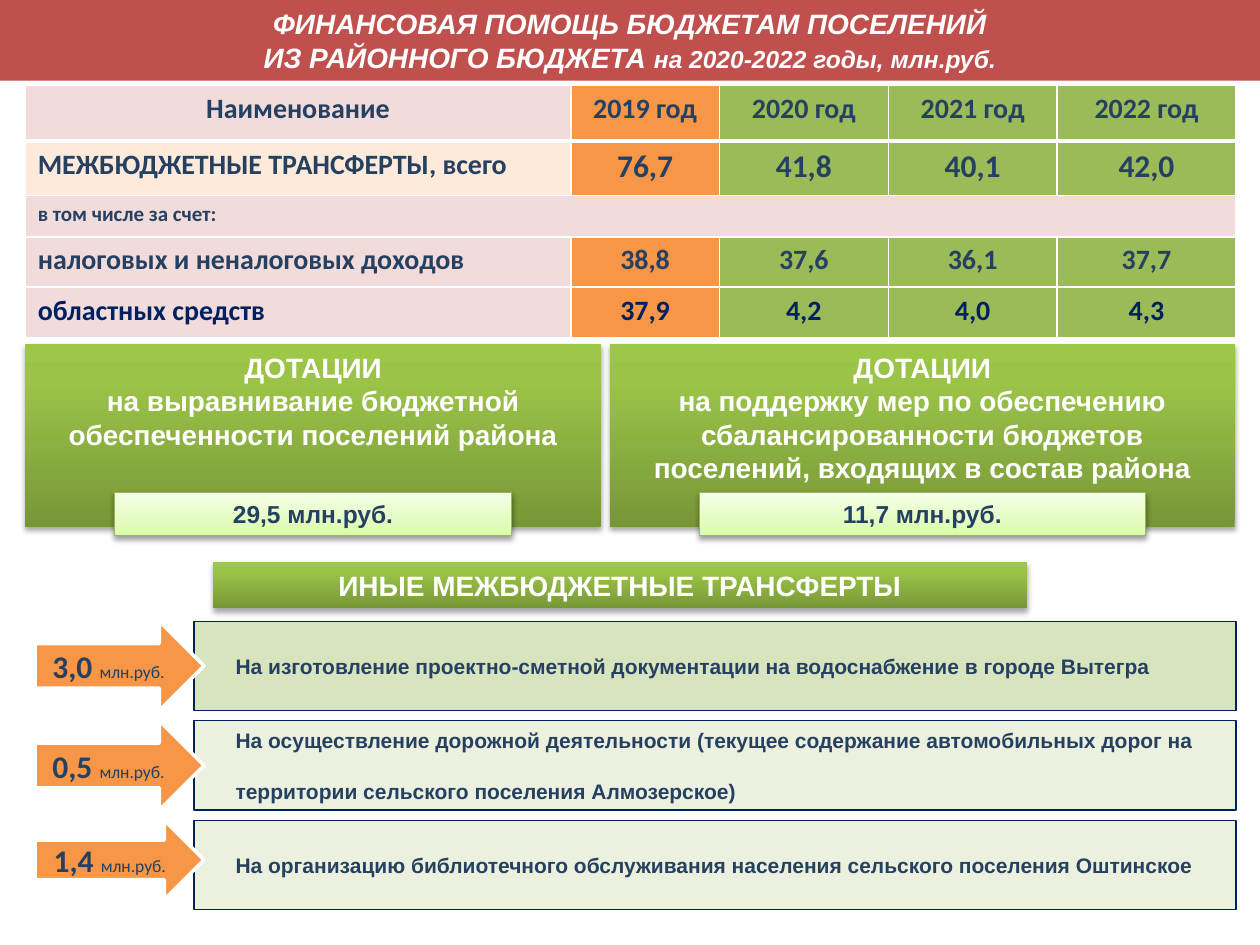
from dataclasses import dataclass

from lxml.etree import SubElement
from pptx import Presentation
from pptx.dml.color import RGBColor
from pptx.enum.shapes import MSO_SHAPE
from pptx.enum.text import MSO_ANCHOR, MSO_AUTO_SIZE, PP_ALIGN
from pptx.oxml.ns import qn
from pptx.util import Inches, Pt


@dataclass(frozen=True)
class Theme:
    heading_font: str = "Arial"
    table_font: str = "Calibri"
    white: str = "FFFFFF"
    navy: str = "254061"
    deep_navy: str = "002060"
    red: str = "C0504D"
    pink: str = "F2DCDB"
    peach: str = "FDEADA"
    orange: str = "F79646"
    green: str = "9BBB59"
    green_line: str = "98B955"
    sage: str = "D7E4BD"
    pale_sage: str = "EBF1DE"
    dark_gradient: tuple = ((0, "779737"), (80, "9BC348"), (100, "9DC746"))
    light_gradient: tuple = ((0, "DAFDA7"), (35, "E4FCC2"), (100, "F5FFE7"))
    large: int = 18
    heading: int = 16
    value: int = 14
    small: int = 12
    unit: int = 10


THEME = Theme()
HEADING = {"name": THEME.heading_font, "size": THEME.heading, "color": THEME.white, "bold": True}
TITLE = HEADING | {"italic": True}
VALUE = HEADING | {"size": THEME.value, "color": THEME.navy}
PURPOSE = VALUE | {"size": THEME.small}
CELL = {"name": THEME.table_font, "size": THEME.heading, "color": THEME.navy, "bold": True}
AMOUNT = CELL | {"size": THEME.large}
UNIT = CELL | {"size": THEME.unit, "bold": False}

COLUMN_WIDTHS = (4.33, 1.18, 1.34, 1.34, 1.42)
COLUMN_FILLS = (THEME.pink, THEME.orange) + (THEME.green,) * 3
# Row height, label, values, first-cell fill, label format, value format
TABLE_ROWS = (
    (0.44, "Наименование", ("2019 год", "2020 год", "2021 год", "2022 год"), THEME.pink, CELL, CELL),
    (0.43, "МЕЖБЮДЖЕТНЫЕ ТРАНСФЕРТЫ, всего", ("76,7", "41,8", "40,1", "42,0"),
     THEME.peach, CELL, AMOUNT),
    (0.33, "в том числе за счет:", (), THEME.pink, CELL | {"size": THEME.small}, CELL),
    (0.4, "налоговых и неналоговых доходов", ("38,8", "37,6", "36,1", "37,7"), THEME.pink, CELL, CELL),
    (0.4, "областных средств", ("37,9", "4,2", "4,0", "4,3"), THEME.pink,
     CELL | {"color": THEME.deep_navy}, CELL | {"color": THEME.deep_navy}),
)
# Left, width, text, then left, width and text of the amount
GRANTS = (
    (0.2, 4.57, "на выравнивание бюджетной обеспеченности поселений района",
     0.91, 3.15, "29,5 млн.руб."),
    (4.84, 4.96, "на поддержку мер по обеспечению сбалансированности бюджетов "
     "поселений, входящих в состав района", 5.55, 3.54, "11,7 млн.руб."),
)
# Amount, arrow height, fill, lines of purpose
TRANSFERS = (
    ("3,0", 0.71, THEME.sage,
     ("На изготовление проектно-сметной документации на водоснабжение в городе Вытегра",)),
    ("0,5", 0.71, THEME.pale_sage,
     ("На осуществление дорожной деятельности (текущее содержание автомобильных дорог на",
      "территории сельского поселения Алмозерское)")),
    ("1,4", 0.63, THEME.pale_sage,
     ("На организацию библиотечного обслуживания населения сельского поселения Оштинское",)),
)


def write_text(frame, paragraphs, align=PP_ALIGN.CENTER, gap=0):
    """Fill a frame; each paragraph is a list of (text, format) spans."""
    for index, spans in enumerate(paragraphs):
        para = frame.add_paragraph() if index else frame.paragraphs[0]
        para.alignment = align
        para.space_before = Pt(gap if index else 0)
        for text, look in spans:
            span = para.add_run()
            span.text = text
            for key, value in look.items():
                if key == "color":
                    span.font.color.rgb = RGBColor.from_string(value)
                else:
                    setattr(span.font, key, Pt(value) if key == "size" else value)


def paint(fill, color):
    fill.solid()
    fill.fore_color.rgb = RGBColor.from_string(color)


def add_color(parent, color):
    return SubElement(parent, qn("a:srgbClr"), val=color)


def paint_gradient(box, stops):
    """Run the stops from the bottom edge to the top edge."""
    box.fill.gradient()
    box.fill.gradient_angle = 90
    stop_list = box.element.spPr.find(".//" + qn("a:gsLst"))
    for old_stop in list(stop_list):
        stop_list.remove(old_stop)
    for position, color in stops:
        add_color(SubElement(stop_list, qn("a:gs"), pos=str(position * 1000)), color)


def cast_shadow(box, alpha, distance):
    effects = box.element.spPr.find(qn("a:effectLst"))
    shadow = SubElement(effects, qn("a:outerShdw"), blurRad=str(Pt(3.1)), dist=str(Pt(distance)),
                        dir="5400000", rotWithShape="0")
    SubElement(add_color(shadow, "000000"), qn("a:alpha"), val=str(alpha * 1000))


def add_box(slide, place, fill, line=None, weight=0.75, shape=MSO_SHAPE.RECTANGLE,
            anchor=MSO_ANCHOR.MIDDLE):
    """Add a shape whose fill is one colour or a tuple of gradient stops."""
    box = slide.shapes.add_shape(shape, *map(Inches, place))
    box.shadow.inherit = False
    if isinstance(fill, str):
        paint(box.fill, fill)
    else:
        paint_gradient(box, fill)
    if line:
        paint(box.line.fill, line)
        box.line.width = Pt(weight)
    else:
        box.line.fill.background()
    box.text_frame.word_wrap = True
    box.text_frame.vertical_anchor = anchor
    return box


def add_title(slide):
    title = slide.shapes.title
    title.left, title.top, title.width, title.height = map(Inches, (0, 0, 10, 0.64))
    paint(title.fill, THEME.red)
    title.text_frame.auto_size = MSO_AUTO_SIZE.NONE
    write_text(title.text_frame, [
        [("ФИНАНСОВАЯ ПОМОЩЬ БЮДЖЕТАМ ПОСЕЛЕНИЙ", TITLE)],
        [("ИЗ РАЙОННОГО БЮДЖЕТА ", TITLE),
         ("на 2020-2022 годы, млн.руб.", TITLE | {"size": THEME.value})],
    ])


def set_borders(cell, bottom):
    properties = cell._tc.get_or_add_tcPr()
    for index, (side, weight) in enumerate((("L", 1), ("R", 1), ("T", 1), ("B", bottom))):
        border = SubElement(properties, qn(f"a:ln{side}"), w=str(Pt(weight)))
        add_color(SubElement(border, qn("a:solidFill")), THEME.white)
        properties.insert(index, border)


def add_budget_table(slide):
    place = map(Inches, (0.2, 0.68, sum(COLUMN_WIDTHS), sum(row[0] for row in TABLE_ROWS)))
    table = slide.shapes.add_table(len(TABLE_ROWS), len(COLUMN_WIDTHS), *place).table
    for column, width in zip(table.columns, COLUMN_WIDTHS):
        column.width = Inches(width)
    for row_index, (height, label, values, label_fill, label_look, value_look) in enumerate(TABLE_ROWS):
        table.rows[row_index].height = Inches(height)
        for index, column_fill in enumerate(COLUMN_FILLS):
            cell = table.cell(row_index, index)
            paint(cell.fill, column_fill if index and values else label_fill)
            set_borders(cell, bottom=1 if row_index else 3)
        centered = PP_ALIGN.LEFT if row_index else PP_ALIGN.CENTER
        write_text(table.cell(row_index, 0).text_frame, [[(label, label_look)]], centered)
        for index, value in enumerate(values, 1):
            write_text(table.cell(row_index, index).text_frame, [[(value, value_look)]])
        if not values:
            table.cell(row_index, 0).merge(table.cell(row_index, len(COLUMN_WIDTHS) - 1))


def add_grant(slide, left, width, purpose, amount_left, amount_width, amount):
    panel = add_box(slide, (left, 2.73, width, 1.45), THEME.dark_gradient, anchor=MSO_ANCHOR.TOP)
    cast_shadow(panel, 35, 1.8)
    write_text(panel.text_frame, [[("ДОТАЦИИ", HEADING)], [(purpose, HEADING)]])
    label = add_box(slide, (amount_left, 3.91, amount_width, 0.34), THEME.light_gradient,
                    THEME.green_line)
    cast_shadow(label, 38, 1.6)
    write_text(label.text_frame, [[(amount, VALUE)]])


def add_section_heading(slide):
    heading = add_box(slide, (1.69, 4.46, 6.46, 0.37), THEME.dark_gradient)
    cast_shadow(heading, 35, 1.8)
    write_text(heading.text_frame, [[("ИНЫЕ МЕЖБЮДЖЕТНЫЕ ТРАНСФЕРТЫ", HEADING)]])


def add_transfer(slide, top, amount, arrow_height, fill, lines):
    box = add_box(slide, (1.54, top, 8.27, 0.71), fill, THEME.deep_navy)
    box.text_frame.margin_left = Inches(0.33)
    write_text(box.text_frame, [[(line, PURPOSE)] for line in lines], PP_ALIGN.LEFT, gap=15)
    arrow = add_box(slide, (0.28, top, 1.34, arrow_height), THEME.orange, THEME.white, 2,
                    MSO_SHAPE.RIGHT_ARROW)
    arrow.text_frame.margin_top = arrow.text_frame.margin_bottom = 0
    write_text(arrow.text_frame, [[(f"{amount} ", AMOUNT), ("млн.руб.", UNIT)]])


def main():
    deck = Presentation()
    deck.slide_width, deck.slide_height = Inches(10), Inches(7.5)
    slide = deck.slides.add_slide(deck.slide_layouts[5])
    add_title(slide)
    add_budget_table(slide)
    for grant in GRANTS:
        add_grant(slide, *grant)
    add_section_heading(slide)
    for index, transfer in enumerate(TRANSFERS):
        add_transfer(slide, 4.93 + 0.79 * index, *transfer)
    deck.save("out.pptx")


if __name__ == "__main__":
    main()
